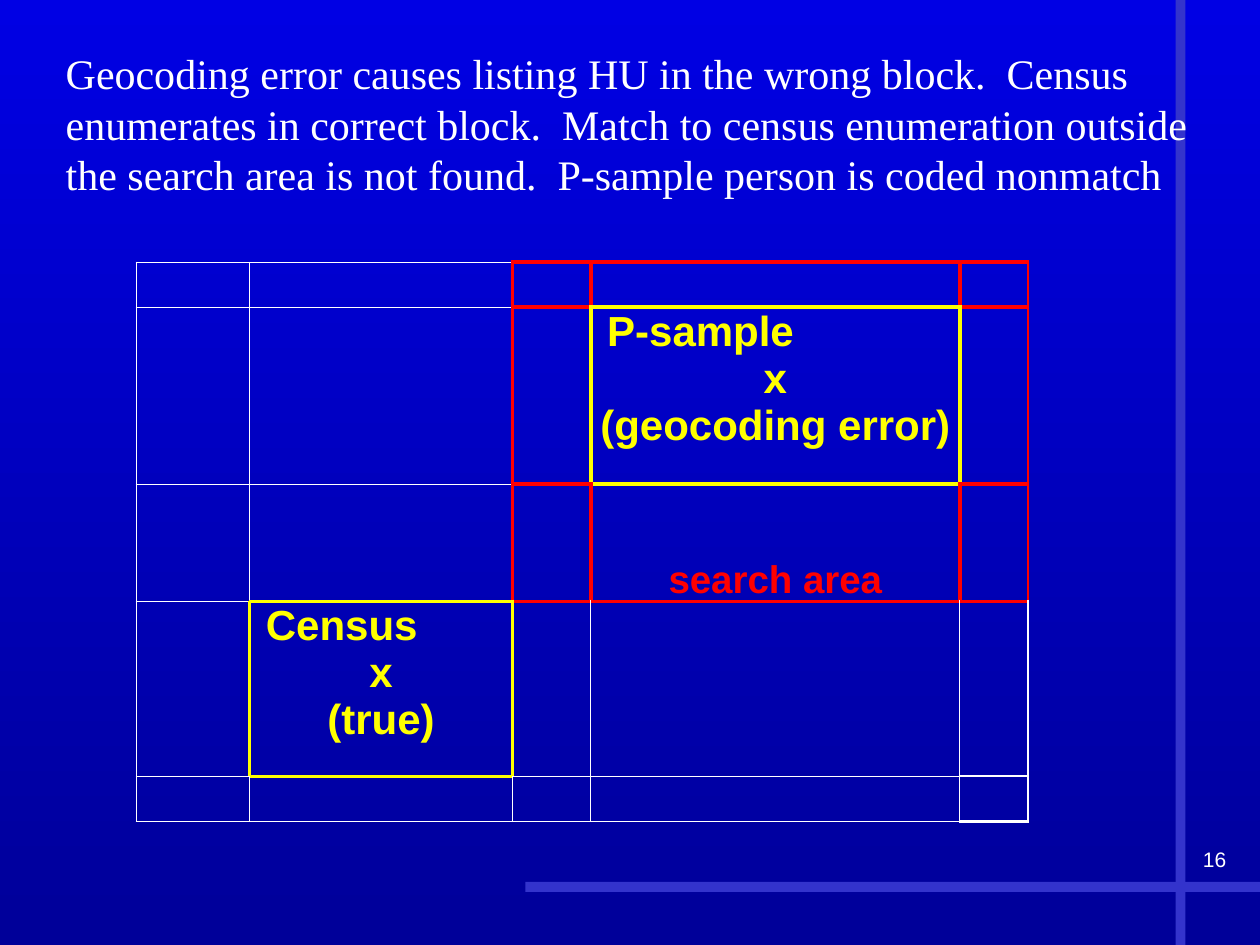
from dataclasses import dataclass
from itertools import product

from lxml import etree
from pptx import Presentation
from pptx.dml.color import RGBColor
from pptx.enum.shapes import MSO_SHAPE
from pptx.enum.text import MSO_ANCHOR, MSO_AUTO_SIZE, PP_ALIGN
from pptx.oxml.ns import qn
from pptx.util import Cm, Pt

RECTANGLE = MSO_SHAPE.RECTANGLE
TOP, BOTTOM = MSO_ANCHOR.TOP, MSO_ANCHOR.BOTTOM
LEFT, CENTER, RIGHT = PP_ALIGN.LEFT, PP_ALIGN.CENTER, PP_ALIGN.RIGHT
NO_AUTOFIT = MSO_AUTO_SIZE.NONE


@dataclass(frozen=True)
class Theme:
    sky: str = "0000E4"
    deep: str = "000099"
    bar: str = "3333CC"
    white: str = "FFFFFF"
    red: str = "FF0000"
    yellow: str = "FFFF00"
    serif: str = "Times New Roman"
    sans: str = "Arial"
    large: int = 24
    area: int = 22
    small: int = 12
    hairline: float = 0.5
    medium: float = 1.5
    thick: float = 2.25


THEME = Theme()
COLUMNS = (2.29, 5.3, 1.58, 7.44, 1.38)
ROWS = (0.91, 3.57, 2.36, 3.53, 0.91)
# Side of a block: row step, column step, and the same edge seen from there
SIDES = {"L": (0, -1, "R"), "R": (0, 1, "L"), "T": (-1, 0, "B"), "B": (1, 0, "T")}
P_SAMPLE_BLOCK, CENSUS_BLOCK, AREA_LABEL_BLOCK = (1, 3), (3, 1), (2, 3)
SEARCH_AREA = tuple(product(range(3), range(2, 5)))

TITLE = (
    "Geocoding error causes listing HU in the wrong block.  Census enumerates "
    "in correct block.  Match to census enumeration outside the search area is "
    "not found.  P-sample person is coded nonmatch"
)


def format_paragraph(paragraph, text, align, size, font, color, bold=False):
    paragraph.text = text
    paragraph.alignment = align
    paragraph.font.color.rgb = RGBColor.from_string(color)
    for attribute, value in {"size": Pt(size), "name": font, "bold": bold}.items():
        setattr(paragraph.font, attribute, value)


def paint_background(slide):
    fill = slide.background.fill
    fill.gradient()
    fill.gradient_angle = 270
    for stop, color in zip(fill.gradient_stops, (THEME.sky, THEME.deep)):
        stop.color.rgb = RGBColor.from_string(color)


def add_bar(slide, left, top, width, height):
    bar = slide.shapes.add_shape(RECTANGLE, Cm(left), Cm(top), Cm(width), Cm(height))
    bar.shadow.inherit = False
    bar.fill.solid()
    bar.fill.fore_color.rgb = RGBColor.from_string(THEME.bar)
    bar.line.fill.background()


def add_slide_number(slide, number):
    box = slide.shapes.add_textbox(Cm(19.69), Cm(16.94), Cm(5.28), Cm(1.27))
    box.text_frame.word_wrap = True
    format_paragraph(box.text_frame.paragraphs[0], number, RIGHT,
                     THEME.small, THEME.sans, THEME.white)


def place_title(slide):
    """Fill the title and bring it in front of the bars."""
    title = slide.shapes.title
    place = {"left": Cm(1.07), "top": Cm(0.84), "width": Cm(23.7), "height": Cm(3.33)}
    for attribute, value in place.items():
        setattr(title, attribute, value)
    frame = title.text_frame
    frame.word_wrap = True
    frame.auto_size = NO_AUTOFIT
    frame.vertical_anchor = TOP
    format_paragraph(frame.paragraphs[0], TITLE, LEFT,
                     THEME.large, THEME.serif, THEME.white)
    slide.shapes._spTree.append(title._element)


def outline(borders, block, color, width, sides="LRTB"):
    """Record a block's border on both blocks that share each edge."""
    row, column = block
    for side in sides:
        row_step, column_step, opposite = SIDES[side]
        borders[row, column, side] = (color, width)
        borders[row + row_step, column + column_step, opposite] = (color, width)


def plan_borders():
    borders = {}
    for block in product(range(len(ROWS)), range(len(COLUMNS))):
        outline(borders, block, THEME.white, THEME.hairline)
    for row in (3, 4):
        outline(borders, (row, 4), THEME.white, THEME.medium, "RB")
    for block in SEARCH_AREA:
        outline(borders, block, THEME.red, THEME.thick)
    for row in range(3):
        outline(borders, (row, 4), THEME.red, THEME.medium, "R")
    for block in (P_SAMPLE_BLOCK, CENSUS_BLOCK):
        outline(borders, block, THEME.yellow, THEME.thick)
    return borders


def draw_border(cell, position, side, color, width):
    line = etree.Element(qn(f"a:ln{side}"), w=str(Pt(width)))
    fill = etree.SubElement(line, qn("a:solidFill"))
    etree.SubElement(fill, qn("a:srgbClr"), val=color)
    cell._tc.get_or_add_tcPr().insert(position, line)


def add_block_map(slide):
    frame = slide.shapes.add_table(len(ROWS), len(COLUMNS), Cm(2.74), Cm(5.28),
                                   Cm(sum(COLUMNS)), Cm(sum(ROWS)))
    block_map = frame.table
    block_map.first_row = block_map.horz_banding = False
    for column, width in zip(block_map.columns, COLUMNS):
        column.width = Cm(width)
    for row, height in zip(block_map.rows, ROWS):
        row.height = Cm(height)

    borders = plan_borders()
    margins = {"margin_left": Cm(0.03), "margin_right": Cm(0.03),
               "margin_top": Cm(0.03), "margin_bottom": 0}
    for row, column in product(range(len(ROWS)), range(len(COLUMNS))):
        cell = block_map.cell(row, column)
        cell.fill.background()
        for attribute, value in margins.items():
            setattr(cell, attribute, value)
        for position, side in enumerate(SIDES):
            draw_border(cell, position, side, *borders[row, column, side])
    return block_map


def label_housing_unit(cell, source, remark):
    """Name the source at the left, with the unit's mark and remark centred below."""
    frame = cell.text_frame
    for index, text in enumerate((source, "x", remark)):
        paragraph = frame.add_paragraph() if index else frame.paragraphs[0]
        format_paragraph(paragraph, text, CENTER if index else LEFT,
                         THEME.large, THEME.sans, THEME.yellow, bold=True)
    frame.paragraphs[0]._p.get_or_add_pPr().set("marL", str(Cm(0.3)))


def label_search_area(cell):
    cell.vertical_anchor = BOTTOM
    format_paragraph(cell.text_frame.paragraphs[0], "search area", CENTER,
                     THEME.area, THEME.sans, THEME.red, bold=True)


def main():
    deck = Presentation()
    deck.slide_width, deck.slide_height = Cm(25.4), Cm(19.05)
    slide = deck.slides.add_slide(deck.slide_layouts[5])
    paint_background(slide)
    add_bar(slide, 10.59, 17.78, 14.81, 0.2)
    add_bar(slide, 23.7, 0, 0.2, 19.05)
    add_slide_number(slide, "16")
    block_map = add_block_map(slide)
    label_housing_unit(block_map.cell(*P_SAMPLE_BLOCK), "P-sample", "(geocoding error)")
    label_housing_unit(block_map.cell(*CENSUS_BLOCK), "Census", "(true)")
    label_search_area(block_map.cell(*AREA_LABEL_BLOCK))
    place_title(slide)
    deck.save("out.pptx")


if __name__ == "__main__":
    main()
